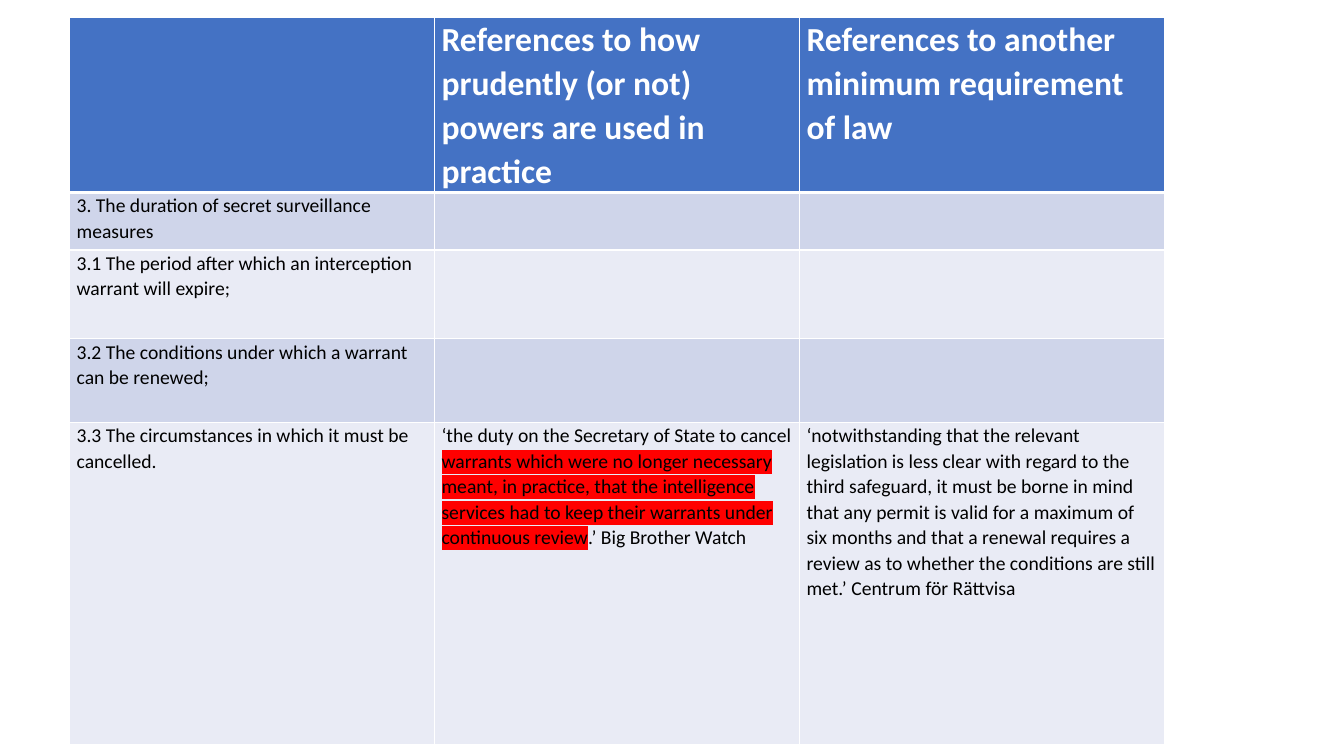
from lxml import etree
from pptx import Presentation
from pptx.dml.color import RGBColor
from pptx.oxml import ns
from pptx.util import Inches, Pt

COLORS = {
    "header": "4472C4",
    "dark_band": "CFD5EA",
    "light_band": "E9EBF5",
    "white": "FFFFFF",
    "black": "000000",
    "marker": "FF0000",
}
COLUMN_WIDTH = 3.62
ROW_HEIGHTS = [1.7, 0.57, 0.88, 0.83, 3.2]
ROWS = [
    [
        [],
        ["References to how prudently (or not) powers are used in practice"],
        ["References to another minimum requirement of law"],
    ],
    [["3. The duration of secret surveillance measures"], [], []],
    [["3.1 The period after which an interception warrant will expire;"], [], []],
    [["3.2 The conditions under which a warrant can be renewed;"], [], []],
    [
        ["3.3 The circumstances in which it must be cancelled."],
        [
            "‘the duty on the Secretary of State to cancel ",
            "warrants which were no longer necessary meant, in practice, that the "
            "intelligence services had to keep their warrants under continuous review",
            ".’ Big Brother Watch",
        ],
        [
            "‘notwithstanding that the relevant legislation is less clear with regard "
            "to the third safeguard, it must be borne in mind that any permit is valid "
            "for a maximum of six months and that a renewal requires a review as to "
            "whether the conditions are still met.’ Centrum för Rättvisa"
        ],
    ],
]


def add_color(parent, tag, color):
    element = etree.SubElement(parent, ns.qn(tag))
    etree.SubElement(element, ns.qn("a:srgbClr"), val=COLORS[color])
    return element


def add_borders(cell, bottom_width):
    properties = cell._tc.get_or_add_tcPr()
    for position, side in enumerate("LRTB"):
        width = bottom_width if side == "B" else 1
        line = etree.Element(ns.qn(f"a:ln{side}"), w=str(Pt(width)))
        add_color(line, "a:solidFill", "white")
        properties.insert(position, line)


deck = Presentation()
deck.slide_width = Inches(13.33)
deck.slide_height = Inches(7.5)
page = deck.slides.add_slide(deck.slide_layouts[6])

table = page.shapes.add_table(
    len(ROWS), 3, Inches(0.69), Inches(0.17),
    Inches(3 * COLUMN_WIDTH), Inches(sum(ROW_HEIGHTS)),
).table
for column in table.columns:
    column.width = Inches(COLUMN_WIDTH)

for row_index, (height, row) in enumerate(zip(ROW_HEIGHTS, ROWS)):
    is_header = row_index == 0
    band = "header" if is_header else ("light_band", "dark_band")[row_index % 2]
    table.rows[row_index].height = Inches(height)
    for column_index, spans in enumerate(row):
        cell = table.cell(row_index, column_index)
        cell.fill.solid()
        cell.fill.fore_color.rgb = RGBColor.from_string(COLORS[band])
        add_borders(cell, 3 if is_header else 1)
        cell.margin_left = cell.margin_right = Inches(0.07)
        cell.margin_top = cell.margin_bottom = 0
        para = cell.text_frame.paragraphs[0]
        para.line_spacing = 1.07
        for span_index, words in enumerate(spans):
            span = para.add_run()
            span.text = words
            span.font.name = "Calibri"
            span.font.size = Pt(24 if is_header else 14)
            span.font.bold = is_header
            ink = COLORS["white" if is_header else "black"]
            span.font.color.rgb = RGBColor.from_string(ink)
            if span_index == 1:
                properties = span._r.get_or_add_rPr()
                highlight = add_color(properties, "a:highlight", "marker")
                properties.find(ns.qn("a:solidFill")).addnext(highlight)

deck.save("out.pptx")
